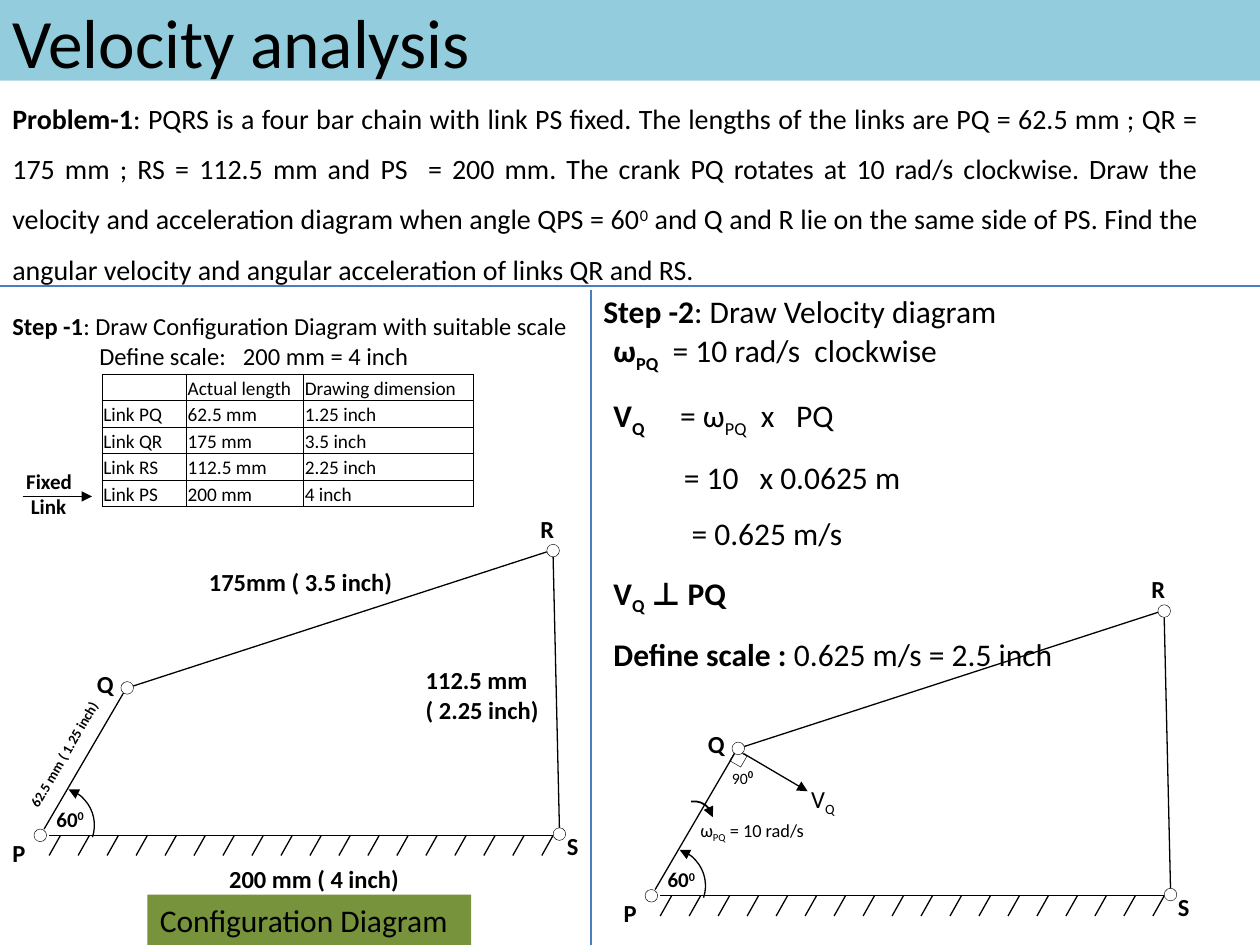
from dataclasses import dataclass

from lxml import etree
from pptx import Presentation
from pptx import util as u
from pptx.dml.color import RGBColor
from pptx.enum import shapes, text
from pptx.oxml.ns import qn


@dataclass(frozen=True)
class Theme:
    font: str = "Calibri"
    ink: str = "000000"
    paper: str = "FFFFFF"
    banner: str = "93CDDD"
    caption: str = "77933C"
    divider: str = "4B7EBC"
    title: float = 39.6
    large: float = 18
    body: float = 16
    label: float = 14
    small: float = 12
    cell: float = 11
    note: float = 10.5
    degree: float = 9
    tiny: float = 8


THEME = Theme()
BASELINES = {"^": "30000", "_": "-25000"}
JOINTS = {"P": (0.32, 6.63), "Q": (1.01, 5.46), "R": (4.39, 4.37), "S": (4.44, 6.62)}
JOINT_LABELS = {"P": (0, 6.6), "Q": (0.67, 5.26), "R": (4.19, 4.03), "S": (4.4, 6.55)}
LINKS = [
    ((0.39, 6.63), (4.39, 6.63)),
    ((0.35, 6.58), (0.98, 5.5)),
    ((1.01, 5.46), (4.34, 4.38)),
    ((4.44, 6.57), (4.39, 4.42)),
]
SCALE_TABLE = [
    ("", "Actual length", "Drawing dimension"),
    ("Link PQ", "62.5 mm", "1.25 inch"),
    ("Link QR", "175 mm", "3.5 inch"),
    ("Link RS", "112.5 mm", "2.25 inch"),
    ("Link PS", "200 mm", "4 inch"),
]


def apply_format(target, values):
    for name, value in values.items():
        setattr(target, name, value)


def inches(values):
    return [u.Inches(value) for value in values]


def write_para(para, spans, size):
    for words, marks in spans:
        span = para.add_run()
        span.text = words
        apply_format(span.font, {"name": THEME.font, "size": u.Pt(size), "bold": "b" in marks})
        span.font.color.rgb = RGBColor.from_string(THEME.ink)
        for mark, baseline in BASELINES.items():
            if mark in marks:
                span._r.get_or_add_rPr().set("baseline", baseline)


def fill_text(box, paras, size):
    frame = box.text_frame
    for index, spans in enumerate(paras):
        para = frame.add_paragraph() if index else frame.paragraphs[0]
        para.alignment = text.PP_ALIGN.LEFT
        write_para(para, spans, size)


def add_text(page, at, paras, size, wrap=False):
    box = page.shapes.add_textbox(*inches(at))
    apply_format(box.text_frame, {
        "word_wrap": wrap, "auto_size": text.MSO_AUTO_SIZE.SHAPE_TO_FIT_TEXT})
    fill_text(box, paras, size)
    return box


def add_label(page, at, words, size=THEME.label, marks="b"):
    return add_text(page, at, [[(line, marks)] for line in words.split("\n")], size)


def set_stops(para, stops):
    tabs = etree.SubElement(para._p.get_or_add_pPr(), qn("a:tabLst"))
    for stop in stops:
        etree.SubElement(tabs, qn("a:tab"), pos=str(u.Inches(stop)), algn="l")


def style_line(item, color, width, arrow=None):
    item.line.color.rgb = RGBColor.from_string(color)
    item.line.width = u.Pt(width)
    if arrow:
        etree.SubElement(item.line._get_or_add_ln(), qn(f"a:{arrow}"), type="triangle")


def add_line(page, start, end, color=THEME.ink, arrow=None):
    line = page.shapes.add_connector(shapes.MSO_CONNECTOR.STRAIGHT, *inches((*start, *end)))
    style_line(line, color, 0.75, arrow)
    etree.SubElement(line._element.spPr, qn("a:effectLst"))


def add_figure(page, kind, at, fill=None, width=None, turn=0, arrow=None):
    figure = page.shapes.add_shape(kind, *inches(at))
    figure.rotation = turn
    figure.shadow.inherit = False
    if fill:
        figure.fill.solid()
        figure.fill.fore_color.rgb = RGBColor.from_string(fill)
    else:
        figure.fill.background()
    if width:
        style_line(figure, THEME.ink, width, arrow)
    else:
        figure.line.fill.background()
    return figure


def border_cell(cell):
    properties = cell._tc.get_or_add_tcPr()
    for index, side in enumerate(("lnL", "lnR", "lnT", "lnB")):
        edge = etree.Element(qn(f"a:{side}"), w=str(u.Pt(0.5)))
        fill = etree.SubElement(edge, qn("a:solidFill"))
        etree.SubElement(fill, qn("a:srgbClr"), val=THEME.ink)
        properties.insert(index, edge)


def add_scale_table(page):
    at = inches((0.81, 2.97, 2.95, 1.04))
    table = page.shapes.add_table(len(SCALE_TABLE), len(SCALE_TABLE[0]), *at).table
    apply_format(table, {"first_row": False, "horz_banding": False})
    for column, width in zip(table.columns, inches((0.67, 0.93, 1.35))):
        column.width = width
    edge = u.Inches(0.01)
    for row, entries in zip(table.rows, SCALE_TABLE):
        row.height = u.Inches(0.21)
        for cell, words in zip(row.cells, entries):
            apply_format(cell, {
                "margin_left": edge, "margin_right": edge, "margin_top": edge,
                "margin_bottom": 0, "vertical_anchor": text.MSO_ANCHOR.BOTTOM})
            cell.fill.background()
            border_cell(cell)
            para = cell.text_frame.paragraphs[0]
            if words:
                write_para(para, [(words, "")], THEME.cell)
            else:
                etree.SubElement(para._p, qn("a:endParaRPr"), sz=str(THEME.cell * 100))


def add_linkage(page, dx=0, dy=0):
    def move(point):
        return point[0] + dx, point[1] + dy

    for start, end in LINKS:
        add_line(page, move(start), move(end))
    for index in range(18):
        x = 0.48 + 0.23 * index
        add_line(page, move((x, 6.63)), move((x - 0.09, 6.79)))
    for name, (x, y) in JOINTS.items():
        at = (*move((x - 0.05, y - 0.05)), 0.1, 0.1)
        add_figure(page, shapes.MSO_SHAPE.OVAL, at, THEME.paper, 0.25)
        add_label(page, (*move(JOINT_LABELS[name]), 0.31, 0.34), name)
    add_figure(page, shapes.MSO_SHAPE.ARC, (*move((0.15, 6.25)), 0.6, 0.6),
               width=0.75, turn=18.4, arrow="headEnd")
    add_text(page, (*move((0.35, 6.35)), 0.43, 0.3), [[("60", "b"), ("0", "b^")]], THEME.small)


def add_problem(page):
    title = add_figure(page, shapes.MSO_SHAPE.RECTANGLE, (0, 0, 10, 0.64), THEME.banner)
    title.text_frame.vertical_anchor = text.MSO_ANCHOR.MIDDLE
    fill_text(title, [[("Velocity analysis", "")]], THEME.title)
    problem = add_text(page, (0, 0.62, 9.61, 1.72), [[
        ("Problem-1", "b"),
        (": PQRS is a four bar chain with link PS fixed. The lengths of the links are "
         "PQ = 62.5 mm ; QR = 175 mm ; RS = 112.5 mm and PS  = 200 mm. The crank PQ rotates "
         "at 10 rad/s clockwise. Draw the velocity and acceleration diagram when angle QPS = 60", ""),
        ("0", "^"),
        (" and Q and R lie on the same side of PS. Find the angular velocity and angular "
         "acceleration of links QR and RS.", ""),
    ]], THEME.body, wrap=True)
    apply_format(problem.text_frame.paragraphs[0], {
        "alignment": text.PP_ALIGN.JUSTIFY, "line_spacing": 1.5})
    add_line(page, (4.69, 2.3), (4.69, 7.5), THEME.divider)
    add_line(page, (0, 2.27), (10, 2.27), THEME.divider)


def add_configuration(page):
    add_text(page, (0, 2.42, 4.64, 0.34), [[
        ("Step -1", "b"), (": Draw Configuration Diagram with suitable scale", "")]], THEME.label)
    scale = add_label(page, (0.69, 2.66, 2.67, 0.34), "Define scale:\t200 mm = 4 inch", marks="")
    set_stops(scale.text_frame.paragraphs[0], [1.14])
    add_scale_table(page)
    add_line(page, (0.18, 3.94), (0.73, 3.94), arrow="tailEnd")
    add_label(page, (0.11, 3.67, 0.57, 0.5), "Fixed\n Link", THEME.small)
    add_linkage(page)
    add_label(page, (1.72, 6.81, 1.56, 0.34), "200 mm ( 4 inch)")
    crank = add_label(page, (-0.06, 5.87, 1.14, 0.24), "62.5 mm ( 1.25 inch)", THEME.tiny)
    crank.rotation = 300.4
    apply_format(crank.text_frame, {"margin_left": 0, "margin_right": 0})
    crank.text_frame.paragraphs[0].alignment = text.PP_ALIGN.CENTER
    add_label(page, (1.56, 4.45, 1.67, 0.34), "175mm ( 3.5 inch)")
    add_label(page, (3.28, 5.23, 1.11, 0.57), "112.5 mm\n( 2.25 inch)")
    caption = add_figure(page, shapes.MSO_SHAPE.RECTANGLE, (1.17, 7.1, 2.57, 0.4), THEME.caption)
    apply_format(caption.text_frame, {"word_wrap": False, "vertical_anchor": text.MSO_ANCHOR.TOP})
    fill_text(caption, [[("Configuration Diagram", "")]], THEME.large)


def add_velocity(page):
    add_text(page, (4.69, 2.27, 3.36, 0.4), [[
        ("Step -2", "b"), (": Draw Velocity diagram", "")]], THEME.large)
    working = add_text(page, (4.77, 2.58, 3.75, 2.68), [
        [("ω", "b"), ("PQ", "b_"), ("\t= 10 rad/s  clockwise", "")],
        [("V", "b"), ("Q", "b_"), ("\t= ω", ""), ("PQ", "_"), ("\tx\tPQ", "")],
        [("\t= 10\tx 0.0625 m", "")],
        [("\t= 0.625 m/s", "")],
        [("V", "b"), ("Q", "b_"), (" ⊥ PQ", "b")],
        [("Define scale : ", "b"), ("0.625 m/s = 2.5 inch", "")],
    ], THEME.large)
    paras = working.text_frame.paragraphs
    for para in paras[1:]:
        para.line_spacing = 1.5
    for para, stops in zip(paras, ([0.47], [0.53, 1.17, 1.45], [0.56, 1.16], [0.62])):
        set_stops(para, stops)
    add_figure(page, shapes.MSO_SHAPE.RECTANGLE, (5.81, 5.97, 0.1, 0.1), width=0.25, turn=30)
    add_linkage(page, 4.85, 0.48)
    add_line(page, (6.41, 6.28), (5.9, 5.98), arrow="headEnd")
    add_text(page, (6.34, 6.17, 0.4, 0.34), [[("V", ""), ("Q", "_")]], THEME.label)
    add_figure(page, shapes.MSO_SHAPE.ARC, (5.36, 6.36, 0.3, 0.3),
               width=1, turn=350.8, arrow="tailEnd")
    add_text(page, (5.46, 6.45, 1.1, 0.29), [[
        ("ω", ""), ("PQ", "_"), (" = 10 rad/s", "")]], THEME.note)
    angle = add_text(page, (5.71, 6.03, 0.38, 0.29), [[("90", ""), ("0", "b^")]], THEME.degree)
    angle.text_frame.paragraphs[0].runs[1].font.size = u.Pt(THEME.note)


def main():
    deck = Presentation()
    apply_format(deck, {"slide_width": u.Inches(10), "slide_height": u.Inches(7.5)})
    page = deck.slides.add_slide(deck.slide_layouts[6])
    add_problem(page)
    add_configuration(page)
    add_velocity(page)
    deck.save("out.pptx")


if __name__ == "__main__":
    main()
